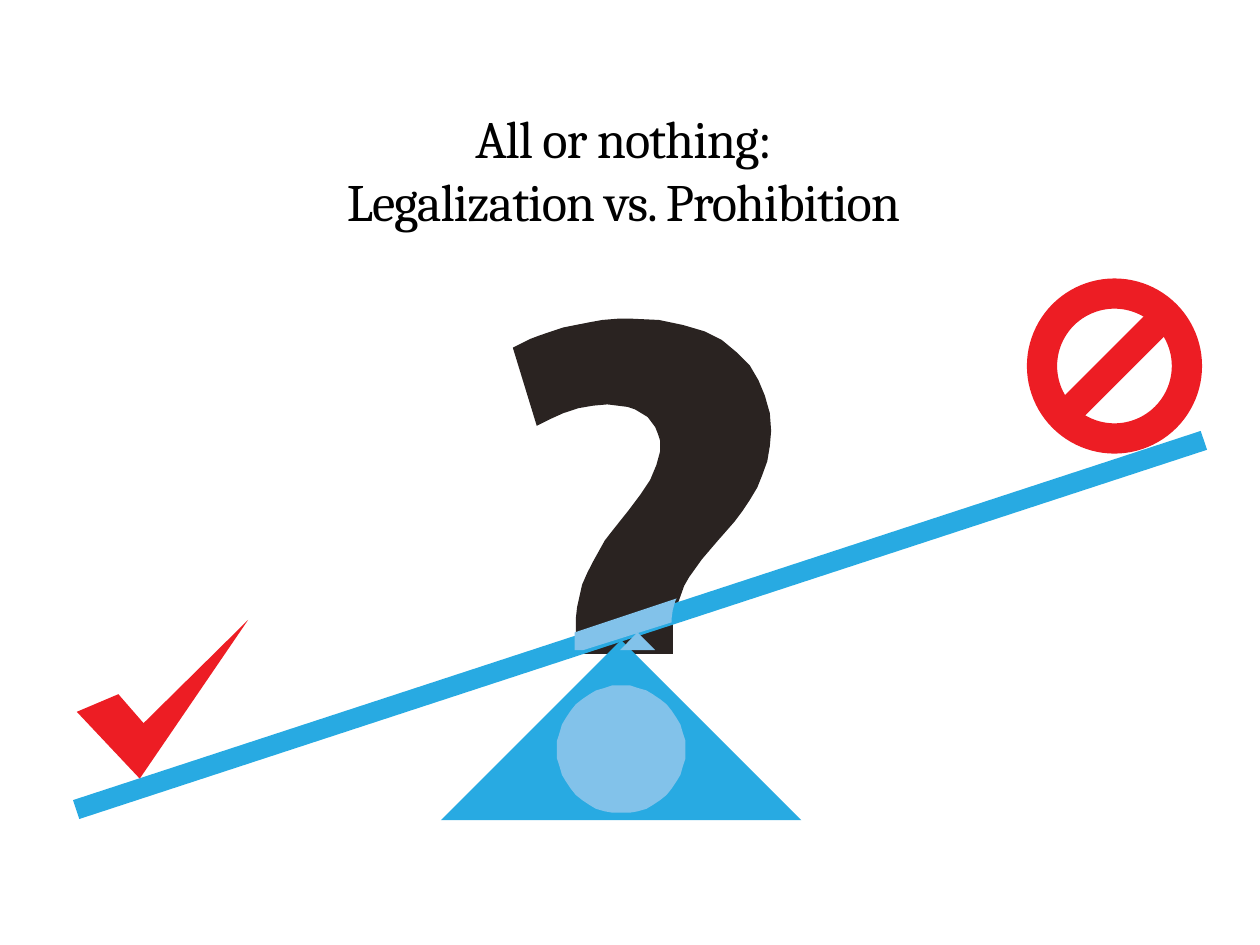
from math import cos, pi, sin

from pptx import Presentation
from pptx.dml.color import RGBColor
from pptx.enum.shapes import MSO_SHAPE as Shape
from pptx.enum.text import MSO_ANCHOR as Anchor, MSO_AUTO_SIZE as AutoSize, PP_ALIGN as Align
from pptx.util import Pt

PX = 9144  # EMU per px, 100 px to the inch
BLACK = RGBColor(0x00, 0x00, 0x00)
DARK = RGBColor(0x2A, 0x23, 0x21)
RED = RGBColor(0xED, 0x1D, 0x24)
BLUE = RGBColor(0x28, 0xAA, 0xE2)
LIGHT_BLUE = RGBColor(0x82, 0xC2, 0xEA)


def circle(cx, cy, r, bottom, steps=48):
    """Points of a circle, cut flat at the given bottom."""
    angles = [2 * pi * i / steps for i in range(steps)]
    return [(round(cx + r * cos(a)), min(round(cy + r * sin(a)), bottom)) for a in angles]


class Deck:
    font = "Cambria"

    def __init__(self, width, height):
        self.prs = Presentation()
        self.prs.slide_width, self.prs.slide_height = width * PX, height * PX
        self.slide = self.prs.slides.add_slide(self.prs.slide_layouts[5])

    def title(self, text, x, y, w, h, size, spacing):
        sp = self.slide.shapes.title
        sp.left, sp.top, sp.width, sp.height = (v * PX for v in (x, y, w, h))
        tf = sp.text_frame
        tf.text = text
        tf.word_wrap, tf.auto_size, tf.vertical_anchor = True, AutoSize.NONE, Anchor.TOP
        tf.margin_left = tf.margin_top = tf.margin_right = tf.margin_bottom = 0
        p = tf.paragraphs[0]
        p.alignment = Align.CENTER
        p.font.name, p.font.size, p.font.color.rgb = self.font, Pt(size), BLACK
        for r in p.runs:
            r.font._element.set("spc", str(spacing))

    def paint(self, sp, color):
        sp.shadow.inherit = False
        sp.fill.solid()
        sp.fill.fore_color.rgb = color
        sp.line.fill.background()

    def outline(self, color, *contours):
        fb = self.slide.shapes.build_freeform(*contours[0][0], scale=PX)
        for i, (start, *rest) in enumerate(contours):
            if i:
                fb.move_to(*start)
            fb.add_line_segments(rest, close=True)
        self.paint(fb.convert_to_shape(), color)

    def ring(self, x, y, size, thickness, color):
        sp = self.slide.shapes.add_shape(Shape.DONUT, x * PX, y * PX, size * PX, size * PX)
        sp.adjustments[0] = thickness / size
        self.paint(sp, color)


# Question mark: hook, clockwise from its lower left tip
HOOK = [
    (426, 338), (436, 333), (447, 328), (459, 324), (471, 322), (482, 321),
    (490, 322), (498, 323), (504, 325), (509, 328), (514, 331), (517, 335),
    (520, 339), (522, 344), (524, 350), (524, 358), (521, 369), (516, 381),
    (508, 393), (499, 405), (487, 420), (480, 429), (475, 438), (470, 447),
    (466, 455), (462, 464), (460, 473), (458, 482), (457, 491), (457, 504),
    (458, 519), (534, 519), (534, 493), (536, 486), (538, 479), (543, 465),
    (547, 458), (552, 451), (557, 444), (563, 437), (569, 430), (576, 422),
    (583, 414), (589, 406), (595, 397), (601, 387), (605, 377), (609, 366),
    (611, 354), (612, 342), (611, 328), (609, 321), (607, 314), (602, 302),
    (595, 290), (585, 280), (573, 270), (559, 263), (542, 258), (523, 254),
    (502, 253), (490, 253), (478, 254), (467, 256), (457, 258), (447, 260),
    (438, 263), (429, 266), (421, 269), (413, 273), (407, 276),
]
CHECK = [(94, 551), (61, 565), (111, 618), (197, 492), (114, 574)]
PLANK = [(953, 342), (58, 635), (63, 650), (958, 357)]
FULCRUM = [(493, 508), (350, 651), (636, 651)]

# Pale areas where the mark meets the plank and the fulcrum
PLANK_OVERLAP = [(537, 475), (456, 502), (456, 516), (463, 516), (533, 494),
                 (533, 491), (534, 484), (536, 477)]
TIP_OVERLAP = [(506, 502), (492, 516), (520, 516)]
BAN_BAR = [(922, 237), (831, 328), (847, 344), (938, 253)]


def main():
    deck = Deck(1000, 750)
    deck.title("All or nothing:\vLegalization vs. Prohibition", 252, 84, 486, 101, 30, -60)

    # Question mark and check mark
    deck.outline(DARK, circle(494, 598, 51, 649), HOOK)
    deck.outline(RED, CHECK)

    # Seesaw
    deck.outline(BLUE, PLANK)
    deck.outline(BLUE, FULCRUM)
    deck.outline(LIGHT_BLUE, PLANK_OVERLAP, TIP_OVERLAP, circle(493, 595, 51, 645))

    # Prohibition sign
    deck.ring(815, 221, 139, 24, RED)
    deck.outline(RED, BAN_BAR)

    deck.prs.save("out.pptx")


if __name__ == "__main__":
    main()
